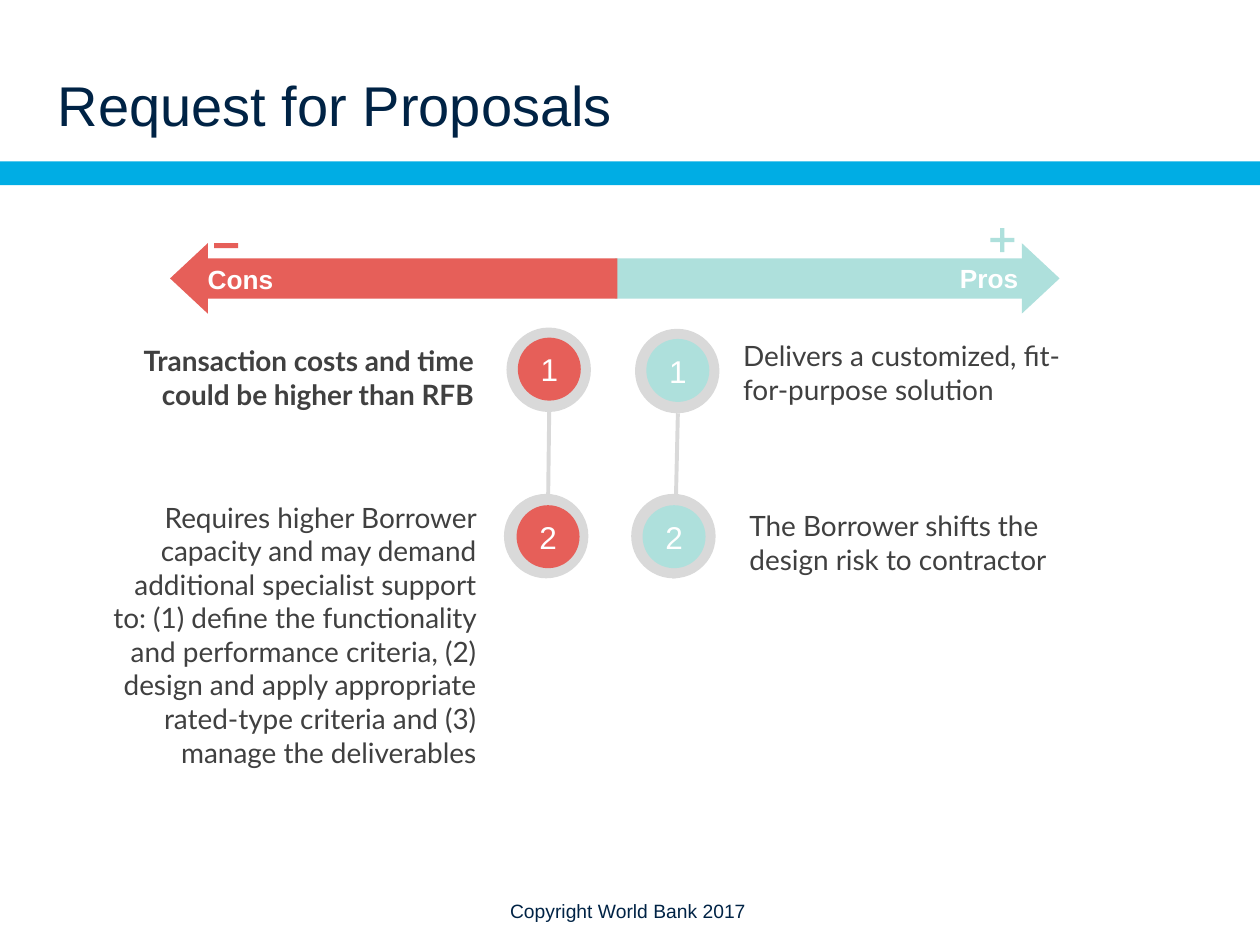
from lxml import etree
from pptx import Presentation
from pptx.dml.color import RGBColor
from pptx.enum.shapes import MSO_CONNECTOR, MSO_SHAPE
from pptx.enum.text import MSO_ANCHOR, PP_ALIGN
from pptx.oxml.ns import qn
from pptx.util import Inches, Pt

RECT, OVAL, PLUS = MSO_SHAPE.RECTANGLE, MSO_SHAPE.OVAL, MSO_SHAPE.CROSS
LEFT, CENTER, RIGHT = PP_ALIGN.LEFT, PP_ALIGN.CENTER, PP_ALIGN.RIGHT
TOP, MIDDLE, BOTTOM = MSO_ANCHOR.TOP, MSO_ANCHOR.MIDDLE, MSO_ANCHOR.BOTTOM

COLORS = {"navy": "002345", "band": "00ADE4", "pros": "AEE0DC", "cons": "E65F59",
          "ring": "D9D9D9", "body": "404040", "white": "FFFFFF"}
TITLE = "Request for Proposals"
COPYRIGHT = "Copyright World Bank 2017"

SIDES = [
    {"name": "Pros", "color": "pros", "align": LEFT,
     "bar_left": 4.88, "arrow_base": 8.11, "arrow_tip": 8.41,
     "heading": (7.52, 2.03, 0.67, 0.35),
     "sign": (PLUS, 7.86, 1.81, 0.19, 0.19),
     "line": (5.38, 3.28, 5.35, 4.59),
     "points": [
         {"text": "Delivers a customized, fit-for-purpose solution", "bold": False,
          "area": (5.8, 2.64, 3.06, 0.64), "ring": (5.04, 2.61), "disc": (5.13, 2.69)},
         {"text": "The Borrower shifts the design risk to contractor", "bold": False,
          "area": (5.85, 3.99, 3.06, 0.64), "ring": (5.01, 3.92), "disc": (5.1, 4.01)},
     ]},
    {"name": "Cons", "color": "cons", "align": RIGHT,
     "bar_left": 1.65, "arrow_base": 1.65, "arrow_tip": 1.35,
     "heading": (1.55, 2.04, 0.73, 0.35),
     "sign": (RECT, 1.7, 1.93, 0.19, 0.04),
     "line": (4.36, 3.18, 4.35, 4.01),
     "points": [
         {"text": "Transaction costs and time could be higher than RFB", "bold": True,
          "area": (0.93, 2.68, 2.93, 0.91), "ring": (4.02, 2.6), "disc": (4.11, 2.68)},
         {"text": "Requires higher Borrower capacity and may demand additional "
                  "specialist support to: (1) define the functionality and performance "
                  "criteria, (2) design and apply appropriate rated-type criteria and "
                  "(3) manage the deliverables", "bold": False,
          "area": (0.7, 3.92, 3.18, 2.26), "ring": (4, 3.92), "disc": (4.1, 4.01)},
     ]},
]
RING_SIZE, DISC_SIZE = 0.67, 0.5
BAR_TOP, BAR_WIDTH, BAR_HEIGHT = 2.05, 3.25, 0.32
ARROW_TOP, ARROW_MIDDLE, ARROW_BOTTOM = 1.93, 2.21, 2.49

deck = Presentation()
deck.slide_width, deck.slide_height = Inches(10), Inches(7.5)
slide = deck.slides.add_slide(deck.slide_layouts[6])
shapes = slide.shapes


def rgb(color):
    return RGBColor.from_string(COLORS[color])


def paint(shape, color):
    shape.shadow.inherit = False
    shape.fill.solid()
    shape.fill.fore_color.rgb = rgb(color)
    shape.line.fill.background()
    return shape


def add_block(kind, left, top, width, height, color):
    return paint(shapes.add_shape(kind, *map(Inches, (left, top, width, height))), color)


def write(shape, text, size, color, font="Arial", bold=False, align=LEFT,
          anchor=TOP, wrap=True):
    frame = shape.text_frame
    frame.word_wrap = wrap
    frame.vertical_anchor = anchor
    frame.text = text
    paragraph = frame.paragraphs[0]
    paragraph.alignment = align
    style = paragraph.runs[0].font
    style.name, style.size, style.bold = font, Pt(size), bold
    style.color.rgb = rgb(color)
    return frame


def add_text(area, text, size, color, **options):
    return write(shapes.add_textbox(*map(Inches, area)), text, size, color, **options)


def add_arrowhead(base, tip, color):
    corners = [(Inches(x), Inches(y)) for x, y in
               ((base, ARROW_TOP), (tip, ARROW_MIDDLE), (base, ARROW_BOTTOM))]
    outline = shapes.build_freeform(*corners[0])
    outline.add_line_segments(corners[1:], close=True)
    paint(outline.convert_to_shape(), color)


def add_link(ends):
    link = shapes.add_connector(MSO_CONNECTOR.STRAIGHT, *map(Inches, ends))
    link.line.color.rgb = rgb("ring")
    link.line.width = Pt(2.25)
    etree.SubElement(link._element.spPr, qn("a:effectLst"))


def add_side(side):
    color = side["color"]
    for point in side["points"]:
        add_block(OVAL, *point["ring"], RING_SIZE, RING_SIZE, "ring")
    add_link(side["line"])
    for number, point in enumerate(side["points"], 1):
        disc = add_block(OVAL, *point["disc"], DISC_SIZE, DISC_SIZE, color)
        label = write(disc, str(number), 18, "white", align=CENTER, anchor=MIDDLE)
        label.margin_top = label.margin_bottom = Inches(0.07)
        add_text(point["area"], point["text"], 16, "body", font="Lato",
                 bold=point["bold"], align=side["align"])
    add_block(RECT, side["bar_left"], BAR_TOP, BAR_WIDTH, BAR_HEIGHT, color)
    add_arrowhead(side["arrow_base"], side["arrow_tip"], color)
    sign = add_block(*side["sign"], color)
    if side["sign"][0] == PLUS:
        sign.adjustments[0] = 0.41
    add_text(side["heading"], side["name"], 15, "white", bold=True, wrap=False)


add_text((3.95, 7.09, 2.13, 0.29), COPYRIGHT, 11, "navy", wrap=False)
add_block(RECT, 0, 1.28, 10, 0.19, "band")
for side in SIDES:
    add_side(side)
title = add_text((0.46, 0.26, 9.25, 0.83), TITLE, 32, "navy", anchor=BOTTOM)
title.margin_left = title.margin_right = title.margin_top = title.margin_bottom = 0

deck.save("out.pptx")
